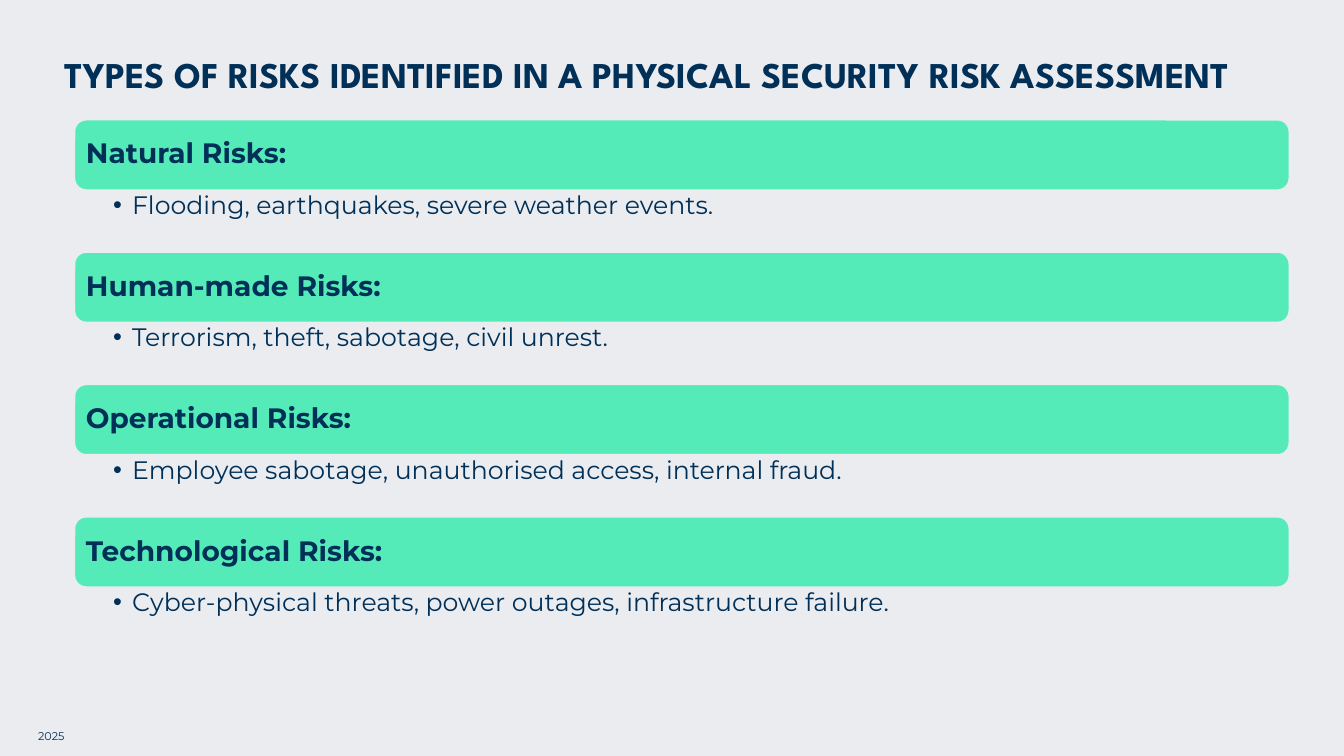
from dataclasses import dataclass

from lxml.etree import SubElement
from pptx import Presentation
from pptx.dml.color import RGBColor
from pptx.enum.shapes import MSO_SHAPE
from pptx.enum.text import MSO_ANCHOR, MSO_AUTO_SIZE, PP_ALIGN
from pptx.oxml.ns import qn
from pptx.util import Cm, Pt


@dataclass(frozen=True)
class Theme:
    background: RGBColor = RGBColor.from_string("EBECF0")
    band: RGBColor = RGBColor.from_string("55EBB9")
    ink: RGBColor = RGBColor.from_string("003057")
    display_font: str = "League Spartan"
    text_font: str = "Montserrat"
    title_size: float = 25.9
    heading_size: float = 20
    detail_size: float = 18
    footer_size: float = 8


THEME = Theme()
TITLE = "TYPES OF RISKS IDENTIFIED IN A PHYSICAL SECURITY RISK ASSESSMENT"
RISKS = [
    ("Natural Risks:", "Flooding, earthquakes, severe weather events."),
    ("Human-made Risks:", "Terrorism, theft, sabotage, civil unrest."),
    ("Operational Risks:", "Employee sabotage, unauthorised access, internal fraud."),
    ("Technological Risks:", "Cyber-physical threats, power outages, infrastructure failure."),
]


def write(holder, text, *, size, font=THEME.text_font, bold=False, bullet=False,
          anchor=MSO_ANCHOR.TOP, insets=(0.25, 0.13, 0.25, 0.13), line_spacing=0.9):
    """Put one formatted paragraph in a shape; insets are left, top, right, bottom in cm."""
    frame = holder.text_frame
    frame.word_wrap = True
    frame.auto_size = MSO_AUTO_SIZE.NONE
    frame.vertical_anchor = anchor
    (frame.margin_left, frame.margin_top,
     frame.margin_right, frame.margin_bottom) = map(Cm, insets)
    paragraph = frame.paragraphs[0]
    paragraph.text = text
    paragraph.alignment = PP_ALIGN.LEFT
    paragraph.line_spacing = line_spacing
    if bullet:
        properties = paragraph._p.get_or_add_pPr()
        properties.set("marL", str(Cm(0.48)))
        properties.set("indent", str(Cm(-0.48)))
        SubElement(properties, qn("a:buFont"), typeface="Arial")
        SubElement(properties, qn("a:buChar"), char="•")
    style = paragraph.runs[0].font
    style.name, style.size, style.bold = font, Pt(size), bold
    style.color.rgb = THEME.ink


def add_title(slide, left, top, width, height):
    title = slide.shapes.title
    title.left, title.top, title.width, title.height = map(Cm, (left, top, width, height))
    write(title, TITLE, size=THEME.title_size, font=THEME.display_font, bold=True)


def add_risk(slide, heading, detail, left, top, width, height):
    """Draw a heading band with its bulleted detail beneath, filling the given height."""
    band_height = height * 0.53
    band = slide.shapes.add_shape(MSO_SHAPE.ROUNDED_RECTANGLE, Cm(left), Cm(top),
                                  Cm(width), Cm(band_height))
    band.shadow.inherit = False
    band.fill.solid()
    band.fill.fore_color.rgb = THEME.band
    band.line.color.rgb = THEME.background
    band.line.width = Pt(1)
    write(band, heading, size=THEME.heading_size, bold=True,
          anchor=MSO_ANCHOR.MIDDLE, insets=(0.2,) * 4)
    detail_box = slide.shapes.add_textbox(Cm(left), Cm(top + band_height),
                                          Cm(width), Cm(height - band_height))
    write(detail_box, detail, size=THEME.detail_size, bullet=True,
          insets=(0.97, 0.07, 0.36, 0.07))


def add_risk_list(slide, left, top, width, height):
    row_height = height / len(RISKS)
    for row, (heading, detail) in enumerate(RISKS):
        add_risk(slide, heading, detail, left, top + row * row_height, width, row_height)


def add_footer(slide, left, top, width, height):
    year = slide.shapes.add_textbox(*map(Cm, (left, top, width, height)))
    write(year, "2025", size=THEME.footer_size, line_spacing=1)


def main():
    deck = Presentation()
    deck.slide_width, deck.slide_height = Cm(33.87), Cm(19.05)
    slide = deck.slides.add_slide(deck.slide_layouts.get_by_name("Title Only"))
    slide.background.fill.solid()
    slide.background.fill.fore_color.rgb = THEME.background
    add_title(slide, 1.37, 1.3, 31.14, 1.68)
    add_risk_list(slide, 1.88, 3.02, 30.61, 13.34)
    add_footer(slide, 0.71, 18.26, 6.65, 0.6)
    deck.save("out.pptx")


if __name__ == "__main__":
    main()
